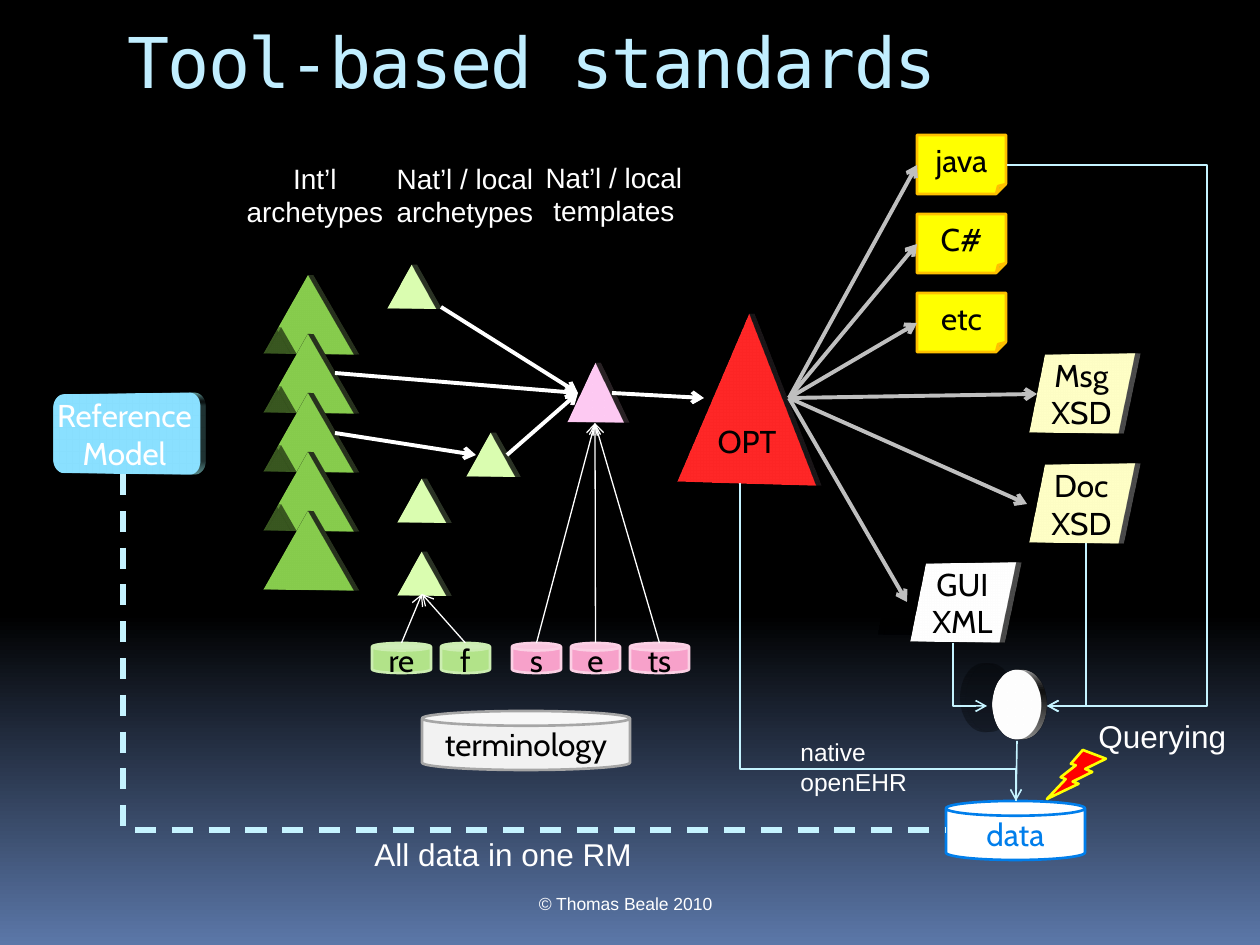
from lxml import etree
from pptx import Presentation
from pptx import util as u
from pptx.dml.color import RGBColor
from pptx.enum import dml, shapes, text
from pptx.oxml import parse_xml
from pptx.oxml.ns import nsdecls, qn

KIND = shapes.MSO_SHAPE
WIRE = shapes.MSO_CONNECTOR
MID = text.PP_ALIGN.CENTER
WHITE, PALE = "FFFFFF", "C5F3FF"
PINK, ROSE = "F7A1CA", "FBD0E4"
LEAF, MINT = "B2E389", "CCEDB1"
HUB = (789, 398)

deck = Presentation()


def px(n):
    return u.Emu(round(n * 914400 / 126))


def rgb(code):
    return RGBColor.from_string(code)


deck.slide_width, deck.slide_height = px(1260), px(945)
slide = deck.slides.add_slide(deck.slide_layouts[5])
tree = slide.shapes


def write(frame, words, size, font, color, align=None):
    """Fill a frame: newline parts paragraphs, | breaks a line."""
    for i, row in enumerate(words.split("\n")):
        para = frame.paragraphs[0] if i == 0 else frame.add_paragraph()
        para.alignment = align
        for j, part in enumerate(row.split("|")):
            if j:
                para.add_line_break()
            run = para.add_run()
            run.text = part
            run.font.size, run.font.name = u.Pt(size), font
            run.font.color.rgb = rgb(color)


def solid(part, side):
    """Give a shape depth towards the right and a soft shadow on the left."""
    props = part._element.spPr
    props.find(qn("a:effectLst")).append(parse_xml(
        f'<a:outerShdw {nsdecls("a")} blurRad="{u.Pt(14.5)}" dist="{u.Pt(19)}" '
        'dir="11520000" rotWithShape="0"><a:srgbClr val="000000">'
        '<a:alpha val="18000"/></a:srgbClr></a:outerShdw>'))
    props.append(parse_xml(
        f'<a:scene3d {nsdecls("a")}><a:camera prst="perspectiveLeft">'
        '<a:rot lat="0" lon="2100000" rev="0"/></a:camera>'
        '<a:lightRig rig="threePt" dir="t"/></a:scene3d>'))
    props.append(parse_xml(
        f'<a:sp3d {nsdecls("a")} extrusionH="{px(10)}"><a:extrusionClr>'
        f'<a:srgbClr val="{side}"/></a:extrusionClr></a:sp3d>'))


def form(kind, x, y, w, h, fill, edge=None, words="", ink="000000", side=None):
    part = tree.add_shape(kind, px(x), px(y), px(w), px(h))
    part.shadow.inherit = False
    part.fill.solid()
    part.fill.fore_color.rgb = rgb(fill)
    if edge:
        part.line.color.rgb, part.line.width = rgb(edge), u.Pt(1.5)
    else:
        part.line.fill.background()
    if side:
        solid(part, side)
    if words:
        frame = part.text_frame
        frame.margin_left = frame.margin_right = 0
        frame.margin_top = frame.margin_bottom = 0
        frame.word_wrap = True
        frame.vertical_anchor = text.MSO_ANCHOR.MIDDLE
        write(frame, words, 18, "Cabin", ink, MID)
    return part


def label(x, y, w, h, words, size, align=None):
    frame = tree.add_textbox(px(x), px(y), px(w), px(h)).text_frame
    frame.word_wrap = False
    write(frame, words, size, "Arial", WHITE, align)
    return frame


def line(start, end, color, width, head=True, kind=WIRE.STRAIGHT):
    wire = tree.add_connector(kind, *map(px, start + end))
    wire.line.color.rgb, wire.line.width = rgb(color), u.Pt(width)
    props = wire._element.spPr
    if head:
        etree.SubElement(wire.line._get_or_add_ln(), qn("a:tailEnd"), type="arrow")
    etree.SubElement(props, qn("a:effectLst"))
    return wire


def elbow(start, end, width=0.94, head=True, down=True, bend=None):
    """Run a bent line; without a bend value it turns only once."""
    (x, y), (p, q) = start, end
    if down:  # a downward start is a sideways line turned about its middle
        mx, my = (x + p) / 2, (y + q) / 2
        dx, dy = (q - y) / 2, abs(p - x) / 2
        sign = -1 if p > x else 1
        start, end = (mx - sign * dx, my - dy), (mx + sign * dx, my + dy)
    wire = line(start, end, PALE, width, head, WIRE.ELBOW)
    props = wire._element.spPr
    if down:
        props.find(qn("a:xfrm")).set("rot", str((270 if p > x else 90) * 60000))
    geom = props.find(qn("a:prstGeom"))
    if bend is None:
        geom.set("prst", "bentConnector2")
    else:
        etree.SubElement(geom.find(qn("a:avLst")), qn("a:gd"),
                         name="adj1", fmla=f"val {round(bend * 100000)}")
    return wire


def base():
    fill = slide.background.fill
    fill.gradient()
    fill.gradient_angle = 270
    for stop, place, code in zip(fill.gradient_stops, (0.65, 1), ("000000", "5B77A8")):
        stop.position, stop.color.rgb = place, rgb(code)
    frame = label(392, 887, 417, 34, "© Thomas Beale 2010", 10, MID)
    frame.word_wrap = True
    para = frame.paragraphs[0]._p.get_or_add_pPr()
    para.set("marL", str(px(48)))
    para.set("indent", str(px(2)))


def head(x, y, w, h):
    title = tree.title
    title.left, title.top, title.width, title.height = map(px, (x, y, w, h))
    frame = title.text_frame
    frame.vertical_anchor = text.MSO_ANCHOR.MIDDLE
    write(frame, "Tool-based standards", 40, "DejaVu Sans Mono", "C1EEFF",
          text.PP_ALIGN.LEFT)
    frame.paragraphs[0].runs[0].font._element.set("spc", "-100")


def model(x, y):
    form(KIND.ROUNDED_RECTANGLE, x, y, 179, 79, "61B6FF",
         words="Reference Model", ink=WHITE, side="A0FFFF")


def world(x, y):
    for i in range(5):
        form(KIND.ISOSCELES_TRIANGLE, x + 20, y + 120 + 59 * i, 110, 79,
             "5FA326", LEAF, side=LEAF)
    label(x, y, 164, 81, "Int’l\narchetypes", 16, MID)


def cans(x, y, items, fill, edge, goal):
    """Row of small drums, each pointing at the goal."""
    for dx, w, words in items:
        form(KIND.CAN, x + dx, y, w, 30, fill, edge, words)
        line((x + dx + w / 2, y), goal, WHITE, 0.75)


def local(x, y):
    for dx, dy in ((0, 110), (79, 278), (10, 397), (10, 324)):
        form(KIND.ISOSCELES_TRIANGLE, x + dx, y + dy, 59, 43, LEAF, MINT, side=MINT)
    label(x + 1, y, 164, 81, "Nat’l / local\narchetypes", 16, MID)
    cans(x - 10, y + 488, ((69, 49, "f"), (0, 59, "re")), LEAF, MINT,
         (x + 40, y + 439))
    form(KIND.CAN, x + 40, y + 556, 208, 59, "F2F2F2", "A6A6A6", "terminology")
    join = (x + 196, y + 238)
    for start, end in (((59, 152), join), ((125, 300), join), ((-47, 218), join),
                       ((-47, 278), (x + 94, y + 300))):
        line((x + start[0], y + start[1]), end, WHITE, 2.25)


def forms(x, y):
    """Local templates, leading to the operational one."""
    form(KIND.ISOSCELES_TRIANGLE, x + 29, y + 209, 69, 59, PINK, ROSE, side=ROSE)
    label(x, y, 164, 81, "Nat’l / local\ntemplates", 16, MID)
    cans(x - 20, y + 489, ((0, 49, "s"), (59, 49, "e"), (118, 59, "ts")),
         PINK, ROSE, (x + 63, y + 269))
    opt = form(KIND.ISOSCELES_TRIANGLE, x + 128, y + 160, 169, 169, "FF0000", ROSE,
               "OPT", side=ROSE)
    opt.adjustments[0] = 0.53
    line((x + 80, y + 239), (x + 172, y + 244), WHITE, 2.25)


def code(x, y):
    for i, words in enumerate(("java", "C#", "etc")):
        top = y + 79 * i
        form(KIND.FOLDED_CORNER, x, top, 89, 59, "FFFF00", "FFC000", words)
        line(HUB, (x, top + 30), "BFBFBF", 2.25)


def sheet(x, y, words, tip, fill="FFE39D", edge=None):
    form(KIND.PARALLELOGRAM, x, y, 129, 79, fill, edge, words, side=WHITE)
    line(HUB, (x + tip[0], y + tip[1]), "BFBFBF", 2.25)


def store(x, y):
    """Data drum with its feeds and its query bolt."""
    form(KIND.OVAL, x + 41, y - 131, 59, 69, "D9D9D9", side=WHITE)
    elbow((953, 643), (x + 41, y - 95))
    elbow((1086, 543), (x + 101, y - 95))
    elbow((1007, 165), (x + 101, y - 95), down=False, bend=5)
    form(KIND.CAN, x, y, 139, 59, WHITE, "007EEB", "data", "007EEB")
    elbow((740, 483), (x + 70, y), bend=0.9)
    line((x + 71, y - 60), (x + 70, y), PALE, 0.94, head=False)
    label(x - 158, y - 70, 132, 72, "native\nopenEHR", 14)
    bolt = form(KIND.LIGHTNING_BOLT, x + 101, y - 51, 59, 49, "FF0000", "FFFF00")
    bolt._element.spPr.find(qn("a:xfrm")).set("flipH", "1")
    label(x + 140, y - 90, 155, 50, "Querying", 18)
    rail = elbow((123, 474), (x, y + 29), width=3, head=False)
    rail.line.dash_style = dml.MSO_LINE.DASH
    label(362, y + 28, 285, 50, "All data in one RM", 18)


def main():
    base()
    head(115, 16, 1071, 90)
    model(35, 394)
    world(233, 155)
    forms(532, 154)
    local(382, 155)
    sheet(898, 563, "GUI XML", (9, 39), "E3E8F4", "ABB9DE")
    sheet(1017, 354, "Msg XSD", (20, 40))
    sheet(1017, 464, "Doc|XSD", (10, 40))
    code(917, 135)
    store(946, 801)
    deck.save("out.pptx")


if __name__ == "__main__":
    main()
